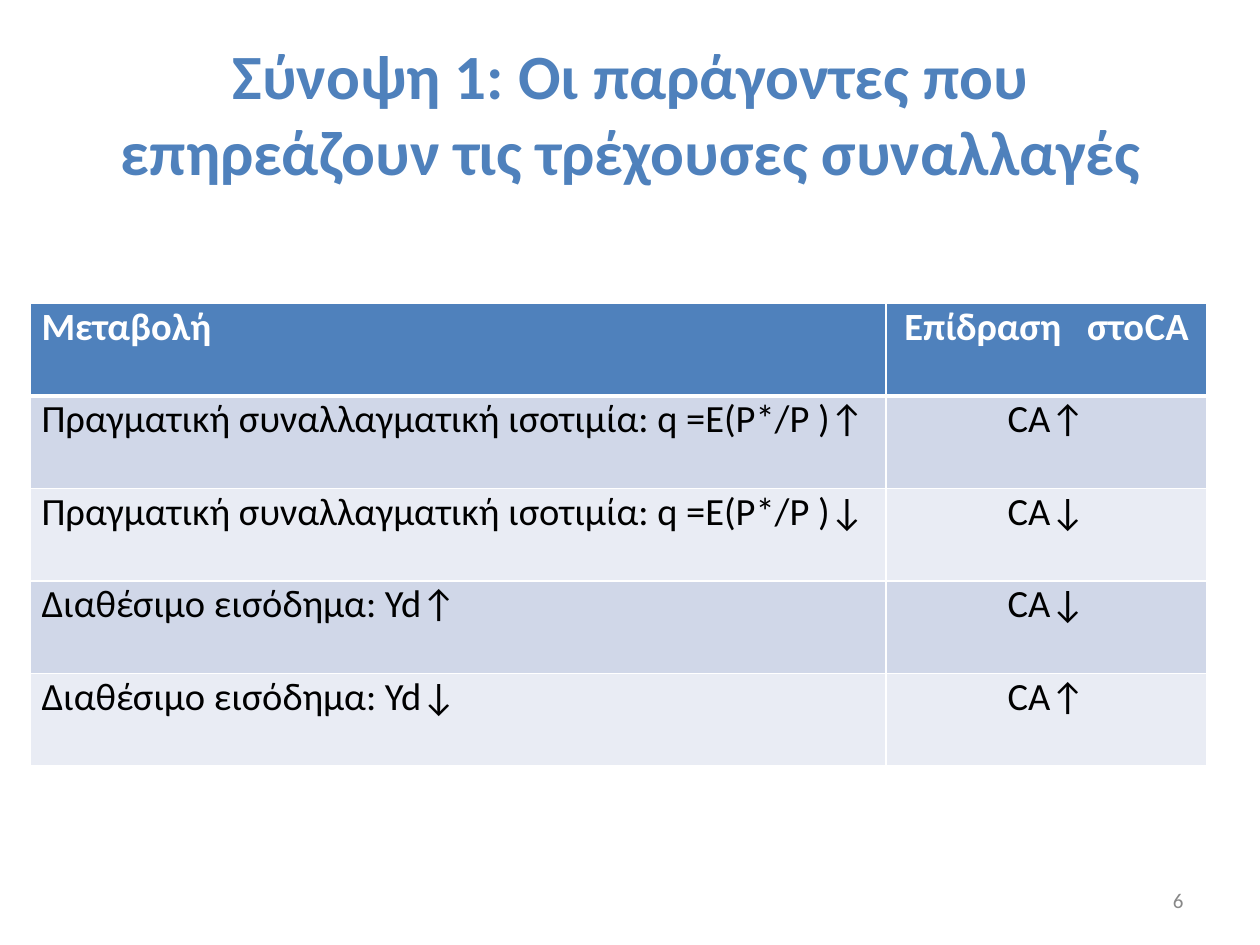
from pptx import Presentation
from pptx.dml.color import RGBColor
from pptx.enum.text import MSO_ANCHOR, MSO_AUTO_SIZE, PP_ALIGN
from pptx.oxml import parse_xml
from pptx.oxml.ns import nsdecls
from pptx.util import Inches, Pt

BLUE = RGBColor(0x4F, 0x81, 0xBC)
BAND_DARK = RGBColor(0xD0, 0xD7, 0xE8)
BAND_LIGHT = RGBColor(0xE9, 0xEC, 0xF4)
WHITE = RGBColor(0xFF, 0xFF, 0xFF)
BLACK = RGBColor(0, 0, 0)
GREY = RGBColor(0x88, 0x88, 0x88)

TITLE_LINES = ["Σύνοψη 1: Οι παράγοντες που", "επηρεάζουν τις τρέχουσες συναλλαγές"]
ROWS = [
    ("Μεταβολή", "Επίδραση   στο\tCA"),
    ("Πραγματική συναλλαγματική ισοτιμία: q =E(P*/P )↑", "CA↑"),
    ("Πραγματική συναλλαγματική ισοτιμία: q =E(P*/P )↓", "CA↓"),
    ("Διαθέσιμο εισόδημα: Yd↑", "CA↓"),
    ("Διαθέσιμο εισόδημα: Yd↓", "CA↑"),
]
SPACE_BEFORE = [1.8, 0.8, 1.8, 1.9, 1.8]
COLUMN_WIDTHS = [6.79, 2.55]


def set_font(paragraph, size, color, bold=False):
    font = paragraph.font
    font.name, font.size, font.bold = "Calibri", Pt(size), bold
    font.color.rgb = color


def clear_margins(frame):
    frame.margin_left = frame.margin_right = 0
    frame.margin_top = frame.margin_bottom = 0


def prepare_frame(shape):
    frame = shape.text_frame
    clear_margins(frame)
    frame.word_wrap = True
    frame.auto_size = MSO_AUTO_SIZE.NONE
    frame.vertical_anchor = MSO_ANCHOR.TOP
    return frame


def add_title(slide, left, top, width, height):
    title = slide.shapes.title
    title.left, title.top, title.width, title.height = left, top, width, height
    frame = prepare_frame(title)
    frame.text = "\n".join(TITLE_LINES)
    for paragraph in frame.paragraphs:
        paragraph.alignment = PP_ALIGN.CENTER
        set_font(paragraph, 36, BLUE, bold=True)


def set_borders(cell, top_width, bottom_width):
    properties = cell._tc.get_or_add_tcPr()
    sides = [("lnL", 1), ("lnR", 1), ("lnT", top_width), ("lnB", bottom_width)]
    for position, (side, width) in enumerate(sides):
        properties.insert(position, parse_xml(
            f'<a:{side} {nsdecls("a")} w="{Pt(width)}"><a:solidFill>'
            f'<a:srgbClr val="{WHITE}"/></a:solidFill></a:{side}>'))


def add_tab_stop(paragraph, position):
    paragraph._p.get_or_add_pPr().append(parse_xml(
        f'<a:tabLst {nsdecls("a")}><a:tab pos="{position}" algn="l"/></a:tabLst>'))


def fill_cell(cell, text, row, column):
    is_header = row == 0
    clear_margins(cell)
    cell.fill.solid()
    cell.fill.fore_color.rgb = BLUE if is_header else BAND_DARK if row % 2 else BAND_LIGHT
    # A thick rule separates the header from the body
    set_borders(cell, 3 if row == 1 else 1, 3 if is_header else 1)
    paragraph = cell.text_frame.paragraphs[0]
    paragraph.text = text
    paragraph.space_before = Pt(SPACE_BEFORE[row])
    if column == 0:
        cell.margin_left = Inches(0.09)
    else:
        paragraph.alignment = PP_ALIGN.CENTER
    if "\t" in text:
        add_tab_stop(paragraph, Inches(1.91))
    set_font(paragraph, 22, WHITE if is_header else BLACK, bold=is_header)


def add_effects_table(slide, left, top, width, height):
    table = slide.shapes.add_table(
        len(ROWS), len(COLUMN_WIDTHS), left, top, width, height).table
    for column, column_width in zip(table.columns, COLUMN_WIDTHS):
        column.width = Inches(column_width)
    for row, texts in enumerate(ROWS):
        for column, text in enumerate(texts):
            fill_cell(table.cell(row, column), text, row, column)


def add_page_number(slide, left, top, width, height):
    frame = prepare_frame(slide.shapes.add_textbox(left, top, width, height))
    frame.margin_left = Inches(0.11)
    paragraph = frame.paragraphs[0]
    paragraph.text = "6"
    paragraph.line_spacing = Pt(12.4)
    set_font(paragraph, 12, GREY)


def main():
    presentation = Presentation()
    presentation.slide_width, presentation.slide_height = Inches(10), Inches(7.5)
    slide = presentation.slides.add_slide(presentation.slide_layouts[5])
    add_page_number(slide, Inches(9.2), Inches(7.07), Inches(0.23), Inches(0.19))
    add_title(slide, Inches(0.94), Inches(0.29), Inches(8.13), Inches(1.24))
    add_effects_table(slide, Inches(0.24), Inches(2.41),
                      Inches(sum(COLUMN_WIDTHS)), Inches(3.67))
    presentation.save("out.pptx")


if __name__ == "__main__":
    main()
